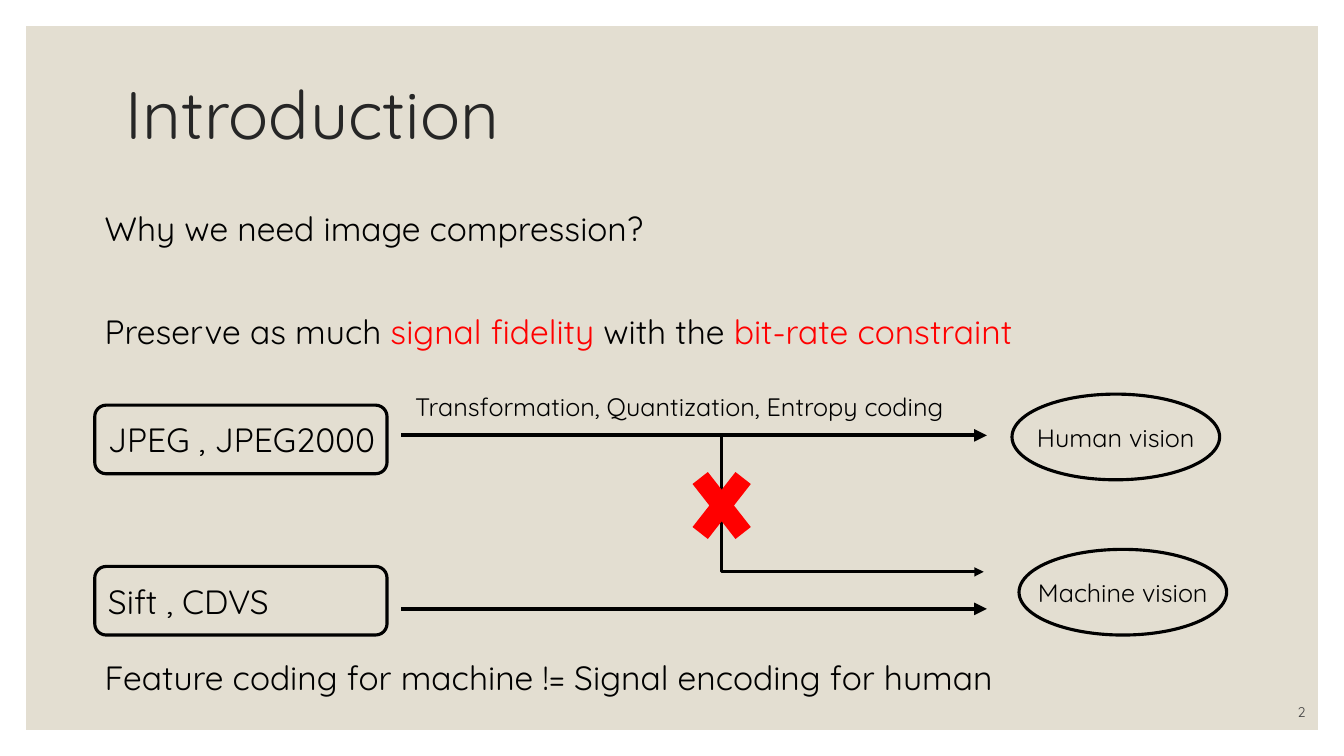
from pptx import Presentation
from pptx import util as u
from pptx.dml.color import RGBColor
from pptx.enum import shapes, text
from pptx.oxml import parse_xml
from pptx.oxml.ns import nsdecls, qn

Pt = u.Pt
FONT = "Quicksand"
BLACK, RED = "000000", "FF0000"

# Content: places are left, top, width, height in points
TITLE = "Introduction"
STATEMENTS = [
    [("Why we need image compression?", BLACK)],
    [("Preserve as much ", BLACK), ("signal fidelity ", RED),
     ("with the ", BLACK), ("bit-rate constraint", RED)],
]
CODECS = [("JPEG , JPEG2000", 289.4), ("Sift , CDVS", 404.6)]
VISIONS = [("Human vision", 722.9, 281.5), ("Machine vision", 727.9, 392.4)]
ARROW_LEVELS = [311, 434.9]
STEPS = "Transformation, Quantization, Entropy coding"
CONCLUSION = "Feature coding for machine != Signal encoding for human"
PAGE = "2"

MARGIN = 18.7
CODEC_LEFT, CODEC_SIZE = 67.7, (208.8, 49)
VISION_SIZE = (148.3, 61.2)
ARROW_LEFT, ARROW_RIGHT = 286.6, 704.9

presentation = Presentation()
presentation.slide_width, presentation.slide_height = Pt(960), Pt(540)
slide = presentation.slides.add_slide(presentation.slide_layouts[5])


def color(value):
    return RGBColor.from_string(value)


def add_run(paragraph, words, size, value=BLACK):
    run = paragraph.add_run()
    run.text = words
    run.font.name, run.font.size = FONT, Pt(size)
    run.font.color.rgb = color(value)


def add_text(place, paragraphs, size, gap=0):
    box = slide.shapes.add_textbox(*map(Pt, place))
    frame = box.text_frame
    frame.word_wrap = True
    for index, runs in enumerate(paragraphs):
        paragraph = frame.add_paragraph() if index else frame.paragraphs[0]
        paragraph.space_before = Pt(gap if index else 0)
        for words, value in runs:
            add_run(paragraph, words, size, value)
    return frame


def add_shape(kind, place, fill=None, line=None):
    shape = slide.shapes.add_shape(kind, *map(Pt, place))
    shape.shadow.inherit = False
    if fill:
        shape.fill.solid()
        shape.fill.fore_color.rgb = color(fill)
    else:
        shape.fill.background()
    if line:
        shape.line.color.rgb = color(line)
        shape.line.width = Pt(2.25)
    else:
        shape.line.fill.background()
    return shape


def add_label(shape, words, size, align, wrap):
    frame = shape.text_frame
    frame.word_wrap = wrap
    frame.vertical_anchor = text.MSO_ANCHOR.MIDDLE
    frame.margin_right = 0 if wrap else frame.margin_left
    paragraph = frame.paragraphs[0]
    paragraph.alignment = align
    add_run(paragraph, words, size)


def add_arrow(kind, start, end, width):
    arrow = slide.shapes.add_connector(kind, *map(Pt, start + end))
    arrow.line.color.rgb = color(BLACK)
    arrow.line.width = Pt(width)
    properties = arrow._element.spPr
    properties.find(qn("a:ln")).append(
        parse_xml(f'<a:tailEnd {nsdecls("a")} type="triangle"/>'))
    properties.append(parse_xml(f'<a:effectLst {nsdecls("a")}/>'))


# Background panel, behind the title
panel = add_shape(shapes.MSO_SHAPE.RECTANGLE,
                  (MARGIN, MARGIN, 960 - 2 * MARGIN, 540 - 2 * MARGIN), "E3DED1")
slide.shapes._spTree.insert(2, panel._element)

# Title
title = slide.shapes.title
title.left, title.top, title.width, title.height = map(Pt, (82.8, 30.2, 792, 108))
title.text_frame.vertical_anchor = text.MSO_ANCHOR.MIDDLE
heading = title.text_frame.paragraphs[0]
heading.alignment = text.PP_ALIGN.LEFT
heading.line_spacing = 0.9
add_run(heading, TITLE, 48, "262626")

# Statements
add_text((CODEC_LEFT, 144.7, 823.7, 120), STATEMENTS, 24, gap=45)

# Codecs and the viewers they serve
for words, top in CODECS:
    codec = add_shape(shapes.MSO_SHAPE.ROUNDED_RECTANGLE,
                      (CODEC_LEFT, top) + CODEC_SIZE, line=BLACK)
    add_label(codec, words, 24, text.PP_ALIGN.LEFT, True)
for words, left, top in VISIONS:
    vision = add_shape(shapes.MSO_SHAPE.OVAL, (left, top) + VISION_SIZE, line=BLACK)
    add_label(vision, words, 18, text.PP_ALIGN.CENTER, False)

# Arrows, with the crossed-out branch
for level in ARROW_LEVELS:
    add_arrow(shapes.MSO_CONNECTOR.STRAIGHT,
              (ARROW_LEFT, level), (ARROW_RIGHT, level), 3)
add_arrow(shapes.MSO_CONNECTOR.ELBOW, (328.3, ARROW_LEVELS[0]), (702.7, 408.5), 2.25)
add_shape(shapes.MSO_SHAPE.MATH_MULTIPLY, (486, 323.3, 59, 75.6), RED)

# Captions and page number
add_text((289.4, 275.8, 413.3, 29), [[(STEPS, BLACK)]], 18)
add_text((CODEC_LEFT, 465.8, 695.5, 36), [[(CONCLUSION, BLACK)]], 24)
page = add_text((824.4, 496.8, 115.2, 21.6), [[(PAGE, "404040")]], 10)
page.vertical_anchor = text.MSO_ANCHOR.BOTTOM
page.paragraphs[0].alignment = text.PP_ALIGN.RIGHT

presentation.save("out.pptx")
